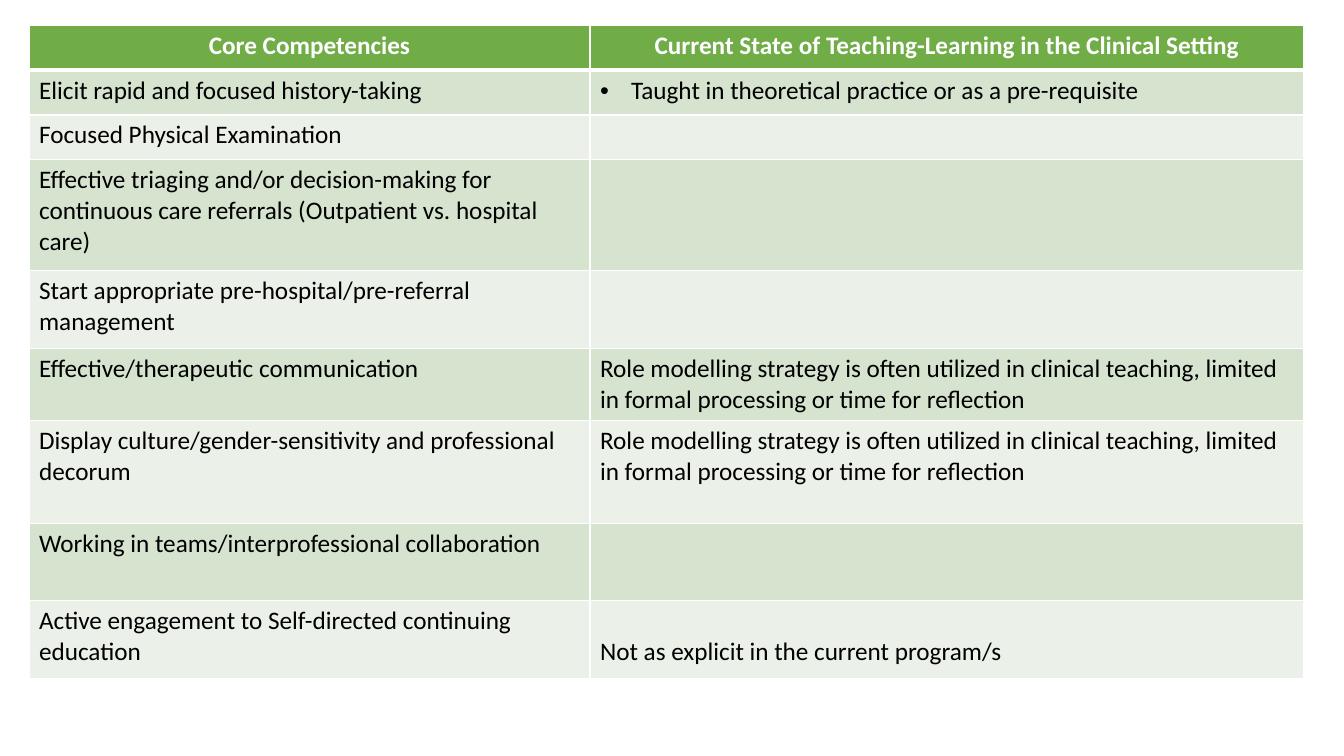
"""Builds a slide with a table of core competencies and how they are taught."""
from lxml import etree
from pptx import Presentation
from pptx import util as u
from pptx.dml import color
from pptx.enum import text
from pptx.oxml import ns

C = {"header": "70AD47", "odd": "D5E3CF", "even": "EBF1E9", "white": "FFFFFF", "black": "000000"}
ROLE = ("Role modelling strategy is often utilized in clinical teaching, "
        "limited in formal processing or time for reflection")
TAUGHT = "Taught in theoretical practice or as a pre-requisite"
EXPLICIT = "Not as explicit in the current program/s"
COLS = [561, 714]
ROWS = [
    (45, "Core Competencies", "Current State of Teaching-Learning in the Clinical Setting"),
    (45, "Elicit rapid and focused history-taking", TAUGHT),
    (45, "Focused Physical Examination", ""),
    (111, "Effective triaging and/or decision-making for continuous care referrals "
          "(Outpatient vs. hospital care)", ""),
    (78, "Start appropriate pre-hospital/pre-referral management", ""),
    (71, "Effective/therapeutic communication", ROLE),
    (103, "Display culture/gender-sensitivity and professional decorum", ROLE),
    (77, "Working in teams/interprofessional collaboration", ""),
    (78, "Active engagement to Self-directed continuing education", EXPLICIT),
]


def px(n):
    return u.Emu(round(n * 914400 / 100.8))


def add_borders(cell, widths):
    tcPr = cell._tc.get_or_add_tcPr()
    for i, (side, pt) in enumerate(widths.items()):
        ln = etree.Element(ns.qn("a:ln" + side), w=str(u.Pt(pt)))
        fill = etree.SubElement(ln, ns.qn("a:solidFill"))
        etree.SubElement(fill, ns.qn("a:srgbClr"), val=C["white"])
        tcPr.insert(i, ln)


prs = Presentation()
prs.slide_width, prs.slide_height = px(1344), px(756)
s = prs.slides.add_slide(prs.slide_layouts[6])

table = s.shapes.add_table(len(ROWS), len(COLS), px(29), px(25),
                           px(sum(COLS)), px(sum(row[0] for row in ROWS))).table
for col, width in zip(table.columns, COLS):
    col.width = px(width)

for i, (height, *words) in enumerate(ROWS):
    table.rows[i].height = px(height)
    header = i == 0
    for j, word in enumerate(words):
        cell = table.cell(i, j)
        cell.fill.solid()
        shade = "header" if header else "odd" if i % 2 else "even"
        cell.fill.fore_color.rgb = color.RGBColor.from_string(C[shade])
        add_borders(cell, {"L": 1, "R": 1, "T": 3 if i == 1 else 1, "B": 3 if header else 1})
        cell.text_frame.text = word
        p = cell.text_frame.paragraphs[0]
        p.alignment = text.PP_ALIGN.CENTER if header else text.PP_ALIGN.LEFT
        if word == TAUGHT:
            pPr = p._p.get_or_add_pPr()
            pPr.set("marL", str(px(31)))
            pPr.set("indent", str(-px(31)))
            etree.SubElement(pPr, ns.qn("a:buFont"), typeface="Arial")
            etree.SubElement(pPr, ns.qn("a:buChar"), char="•")
        if word == EXPLICIT:
            cell.vertical_anchor = text.MSO_ANCHOR.BOTTOM
            cell.margin_bottom = px(11)
        for r in p.runs:
            r.font.name = "Calibri"
            r.font.size = u.Pt(18)
            r.font.bold = header
            r.font.color.rgb = color.RGBColor.from_string(C["white" if header else "black"])

prs.save("out.pptx")
